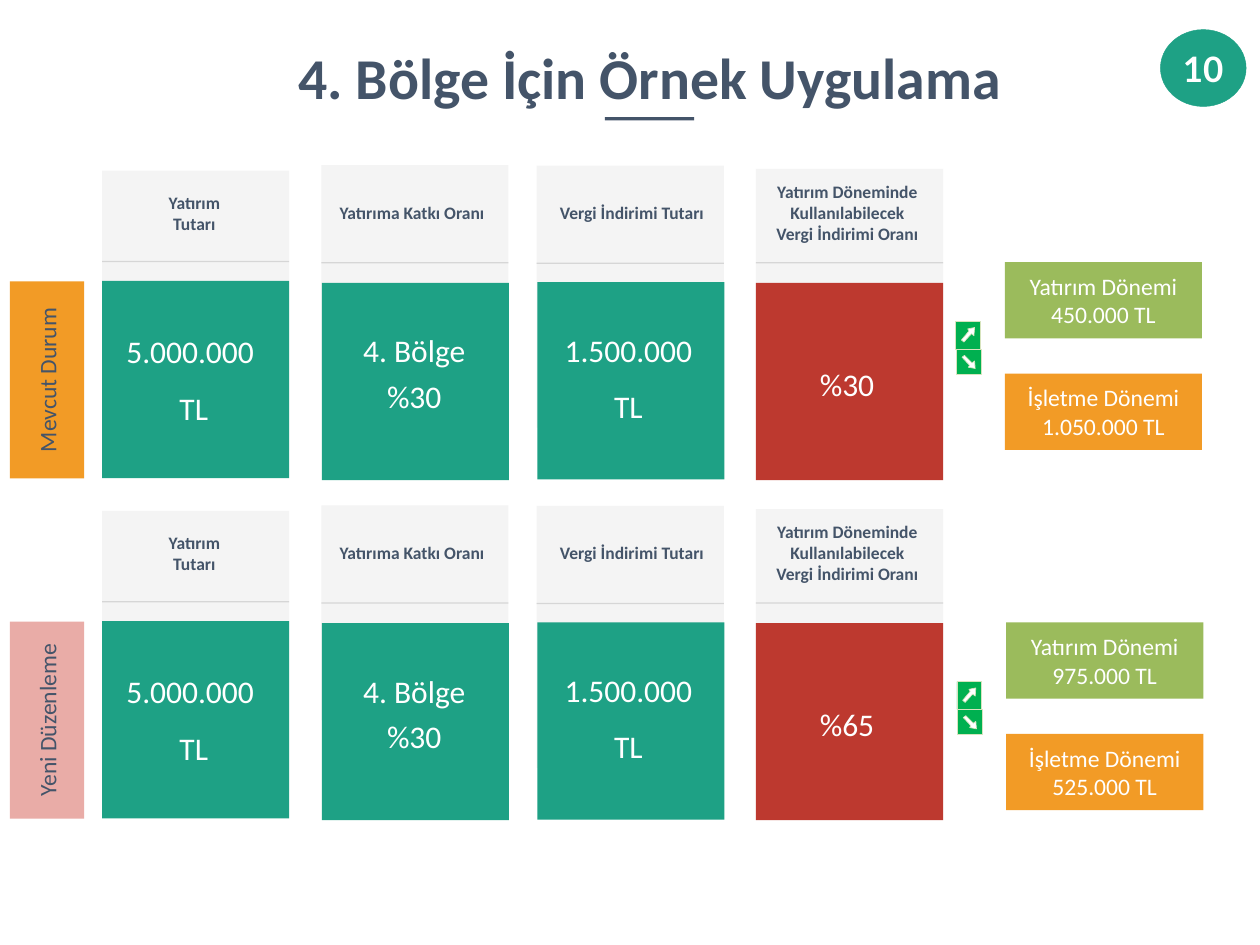
from dataclasses import dataclass

from pptx import Presentation
from pptx import util as u
from pptx.dml.color import RGBColor
from pptx.enum import shapes, text


@dataclass(frozen=True)
class Theme:
    """Colours, fonts and type sizes."""
    navy: str = "445469"
    green: str = "1EA185"
    red: str = "BD392F"
    orange: str = "F29B26"
    pink: str = "E9ACA7"
    lime: str = "9BBB5C"
    arrow: str = "00B050"
    arrow_edge: str = "D7E4BE"
    panel: str = "F4F4F4"
    rule: str = "D6D6D6"
    white: str = "FFFFFF"
    font: str = "Calibri"
    badge_font: str = "Lato"
    title_size: int = 66
    badge_size: int = 40
    value_size: int = 36
    label_size: int = 27
    header_size: int = 20


THEME = Theme()

# Arrow pointing down and right, inside its tile
TILE_WIDTH, TILE_HEIGHT = 0.39, 0.4
TILE = [(0, 0), (TILE_WIDTH, 0), (TILE_WIDTH, TILE_HEIGHT), (0, TILE_HEIGHT)]
ARROW = [(0.29, 0.19), (0.25, 0.22), (0.13, 0.1), (0.09, 0.13),
         (0.21, 0.26), (0.19, 0.29), (0.3, 0.31)]


class Page:
    """One slide and the style of its elements."""

    def __init__(self, deck, theme):
        self.slide = deck.slides.add_slide(deck.slide_layouts[5])
        self.theme = theme

    def paint(self, shape, fill, edge=None, edge_width=0.5):
        shape.shadow.inherit = False
        shape.fill.solid()
        shape.fill.fore_color.rgb = RGBColor.from_string(fill)
        if edge:
            shape.line.color.rgb = RGBColor.from_string(edge)
            shape.line.width = u.Pt(edge_width)
        else:
            shape.line.fill.background()

    def set_text(self, shape, lines, size, color, bold=False, font=None,
                 inset=(0, 0), anchor=text.MSO_ANCHOR.MIDDLE, **spacing):
        side, edge = (u.Inches(value) for value in inset)
        frame = shape.text_frame
        frame_format = {
            "word_wrap": True, "auto_size": text.MSO_AUTO_SIZE.NONE,
            "vertical_anchor": anchor, "margin_left": side,
            "margin_right": side, "margin_top": edge, "margin_bottom": edge,
        }
        para_format = {"alignment": text.PP_ALIGN.CENTER, **spacing}
        font_format = {"size": u.Pt(size), "bold": bold,
                       "name": font or self.theme.font}
        for name, value in frame_format.items():
            setattr(frame, name, value)
        for index, line in enumerate(lines):
            para = frame.add_paragraph() if index else frame.paragraphs[0]
            for name, value in para_format.items():
                setattr(para, name, value)
            span = para.add_run()
            span.text = line
            for name, value in font_format.items():
                setattr(span.font, name, value)
            span.font.color.rgb = RGBColor.from_string(color)

    def title(self, line, *place):
        shape = self.slide.shapes.title
        sides = ("left", "top", "width", "height")
        for name, value in zip(sides, place):
            setattr(shape, name, u.Inches(value))
        self.set_text(shape, [line], self.theme.title_size, self.theme.navy,
                      bold=True, inset=(0.08, 0.04),
                      anchor=text.MSO_ANCHOR.TOP)

    def box(self, fill, *place, kind=shapes.MSO_SHAPE.RECTANGLE, edge=None):
        shape = self.slide.shapes.add_shape(kind, *map(u.Inches, place))
        self.paint(shape, fill, edge)
        return shape

    def label(self, fill, lines, *place, color=None, inset=(0.15, 0.08)):
        shape = self.box(fill, *place)
        self.set_text(shape, lines, self.theme.label_size,
                      color or self.theme.white, inset=inset)
        return shape

    def header(self, line, *place):
        shape = self.slide.shapes.add_textbox(*map(u.Inches, place))
        self.set_text(shape, [line], self.theme.header_size, self.theme.navy,
                      bold=True, inset=(0.04, 0.05))

    def value(self, lines, *place):
        shape = self.slide.shapes.add_textbox(*map(u.Inches, place))
        self.set_text(shape, lines, self.theme.value_size, self.theme.white,
                      anchor=text.MSO_ANCHOR.TOP, line_spacing=1.2,
                      space_before=u.Pt(12.8))

    def arrow_tile(self, left, top, upward=False):
        def place(point):
            x, y = point
            y = (TILE_HEIGHT - y) * 1.1 if upward else y
            return u.Inches(left + x), u.Inches(top + y)

        tile, arrow = ([place(point) for point in outline]
                       for outline in (TILE, ARROW))
        builder = self.slide.shapes.build_freeform(*tile[0])
        builder.add_line_segments(tile[1:], close=True)
        builder.move_to(*arrow[0])
        builder.add_line_segments(arrow[1:], close=True)
        self.paint(builder.convert_to_shape(), self.theme.arrow,
                   self.theme.arrow_edge, 0.75)


# Columns: header, its left and width; panel left, top, height;
# rule top; block left, top and colour; value left and top
COLUMNS = [
    ("Yatırım Tutarı", 2.32, 1.53, 1.62, 2.71, 4.44,
     4.14, 1.62, 4.46, THEME.green, 1.92, 5.15),
    ("Yatırıma Katkı Oranı", 5.31, 2.46, 5.1, 2.62, 3.41,
     4.16, 5.11, 4.49, THEME.green, 5.42, 5.14),
    ("Vergi İndirimi Tutarı", 8.8, 2.46, 8.52, 2.63, 4.16,
     4.17, 8.53, 4.48, THEME.green, 8.82, 5.13),
    ("Yatırım Döneminde Kullanılabilecek Vergi İndirimi Oranı",
     12.22, 2.46, 12, 2.68, 3.98,
     4.16, 12, 4.49, THEME.red, 12.29, 5.67),
]

# Rows: name, colour, table drop, result shift and drop, rate, results
ROWS = [
    ("Mevcut Durum", THEME.orange, 0, 0, 0,
     "%30", "450.000 TL", "1.050.000 TL"),
    ("Yeni Düzenleme", THEME.pink, 5.4, 0.02, 5.72,
     "%65", "975.000 TL", "525.000 TL"),
]


def add_row(page, name, color, drop, shift, result_drop,
            rate, investment, operation):
    theme = page.theme
    values = [["5.000.000 ", "TL"], ["4. Bölge %30"],
              ["1.500.000", "TL"], [rate]]

    # Header panels and value blocks
    for column, lines in zip(COLUMNS, values):
        (header, header_left, header_width, panel_left, panel_top,
         panel_height, rule_top, block_left, block_top, block_color,
         value_left, value_top) = column
        page.box(theme.panel, panel_left, panel_top + drop, 2.97, panel_height)
        page.box(theme.rule, panel_left, rule_top + drop, 2.97, 0.02)
        page.header(header, header_left, 3.12 + drop, header_width, 0.51)
        page.box(block_color, block_left, block_top + drop, 2.97, 3.13)
        page.value(lines, value_left, value_top + drop, 2.31, 0.35)

    # Row name on its side
    side = page.label(color, [name], -0.82, 5.44 + drop, 3.13, 1.18,
                      color=theme.navy, inset=(0.19, 0.1))
    side.rotation = 270

    # Arrows and results
    page.arrow_tile(15.18 + shift, 5.54 + result_drop)
    page.arrow_tile(15.17 + shift, 5.1 + result_drop, upward=True)
    page.label(theme.lime, ["Yatırım Dönemi", investment],
               15.95 + shift, 4.16 + result_drop, 3.13, 1.21)
    page.label(theme.orange, ["İşletme Dönemi", operation],
               15.95 + shift, 5.93 + result_drop, 3.13, 1.21)


def main():
    deck = Presentation()
    deck.slide_width, deck.slide_height = u.Inches(20), u.Inches(15)
    page = Page(deck, THEME)

    # Title and underline
    page.title("4. Bölge İçin Örnek Uygulama", 3.19, 0.63, 14.25, 1.19)
    page.box(THEME.navy, 9.6, 1.86, 1.42, 0.05)

    # Comparison rows
    for row in ROWS:
        add_row(page, *row)

    # Page number badge
    badge = page.box(THEME.green, 18.42, 0.47, 1.36, 1.22,
                     kind=shapes.MSO_SHAPE.OVAL, edge=THEME.green)
    page.set_text(badge, ["10"], THEME.badge_size, THEME.white, bold=True,
                  font=THEME.badge_font, inset=(0.08, 0.04))

    deck.save("out.pptx")


if __name__ == "__main__":
    main()
